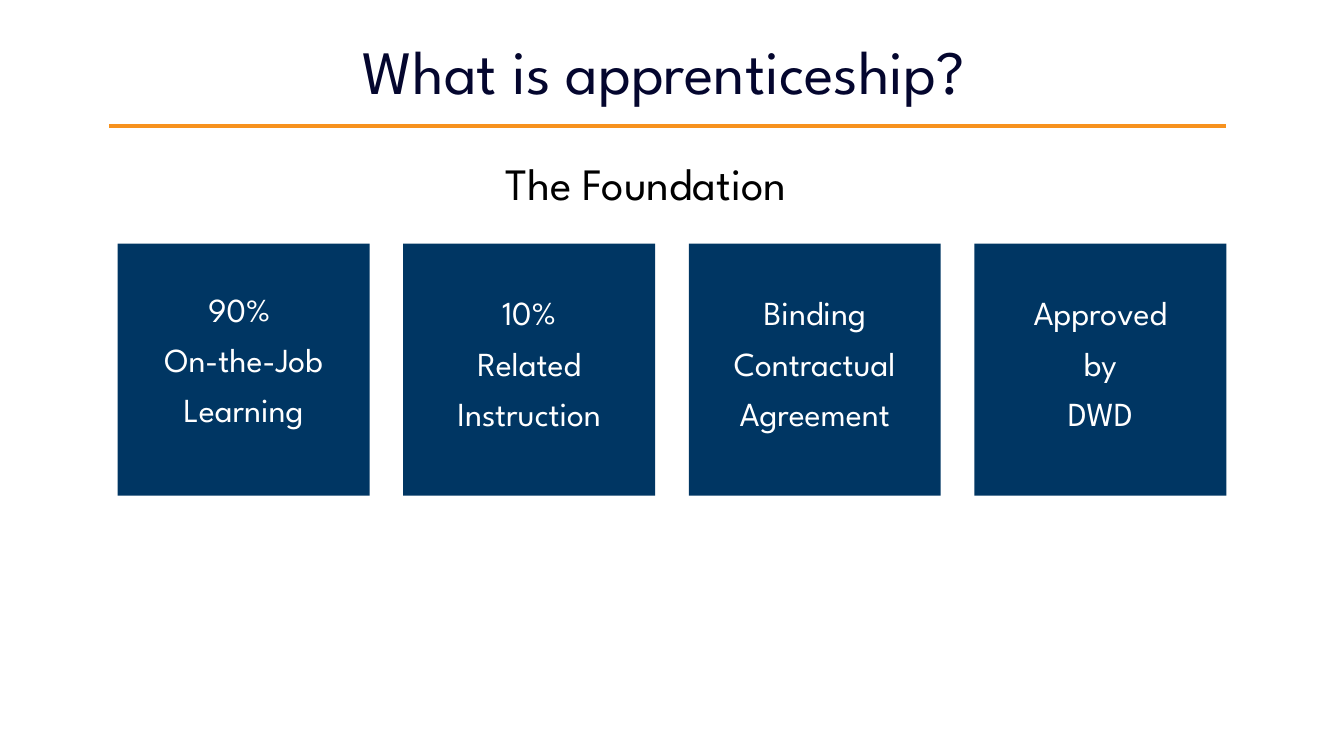
from lxml import etree
from pptx import Presentation
from pptx.dml.color import RGBColor
from pptx.enum.shapes import MSO_CONNECTOR, MSO_SHAPE
from pptx.enum.text import MSO_ANCHOR, PP_ALIGN
from pptx.oxml.ns import qn
from pptx.util import Pt

STRAIGHT = MSO_CONNECTOR.STRAIGHT
RECTANGLE = MSO_SHAPE.RECTANGLE
TOP, MIDDLE = MSO_ANCHOR.TOP, MSO_ANCHOR.MIDDLE
LEFT, CENTER = PP_ALIGN.LEFT, PP_ALIGN.CENTER

INK = RGBColor(0x04, 0x06, 0x2E)
NAVY = RGBColor(0x00, 0x36, 0x63)
ORANGE = RGBColor(0xF7, 0x92, 0x1E)
WHITE = RGBColor(0xFF, 0xFF, 0xFF)
BLACK = RGBColor(0x00, 0x00, 0x00)
FONT = "League Spartan"

# Top inset in points, then the lines of each card
FOUNDATIONS = [
    (35.5, ["90% ", "On-the-Job", "Learning"]),
    (38, ["10%", "Related", "Instruction"]),
    (38, ["Binding", "Contractual", "Agreement"]),
    (38, ["Approved", "by", "DWD"]),
]


def write_lines(frame, lines, size, color, align=CENTER, spacing=0.9, gap=0):
    """Fill a text frame with one paragraph per line, with a gap between them."""
    frame.word_wrap = True
    for index, line in enumerate(lines):
        paragraph = frame.paragraphs[0] if index == 0 else frame.add_paragraph()
        paragraph.alignment = align
        paragraph.line_spacing = spacing
        if index:
            paragraph.space_before = Pt(gap)
        run = paragraph.add_run()
        run.text = line
        for name, value in {"name": FONT, "size": Pt(size), "bold": False}.items():
            setattr(run.font, name, value)
        run.font.color.rgb = color


def add_heading(slide, left, top, width, height):
    """Place the slide title with the orange rule below it."""
    title = slide.shapes.add_textbox(Pt(left), Pt(top), Pt(width), Pt(height))
    title.text_frame.vertical_anchor = MIDDLE
    write_lines(title.text_frame, ["What is apprenticeship? "], 44, INK)

    rule_y = Pt(top + height + 12)
    rule = slide.shapes.add_connector(
        STRAIGHT, Pt(left + 12), rule_y, Pt(left + width - 18), rule_y)
    rule.line.color.rgb = ORANGE
    rule.line.width = Pt(3)
    etree.SubElement(rule._element.spPr, qn("a:effectLst"))


def add_subtitle(slide, left, top, width, height):
    subtitle = slide.shapes.add_textbox(Pt(left), Pt(top), Pt(width), Pt(height))
    write_lines(subtitle.text_frame, ["The Foundation"], 32, BLACK, LEFT, 1.0)


def add_foundation_cards(slide, left, top, width, height):
    """Spread square cards evenly over the width."""
    step = (width - height) / (len(FOUNDATIONS) - 1)
    for index, (inset, lines) in enumerate(FOUNDATIONS):
        card = slide.shapes.add_shape(
            RECTANGLE, Pt(left + index * step), Pt(top), Pt(height), Pt(height))
        card.shadow.inherit = False
        card.fill.solid()
        card.fill.fore_color.rgb = NAVY
        card.line.fill.background()
        frame = card.text_frame
        frame.vertical_anchor = TOP
        frame.margin_top = Pt(inset)
        write_lines(frame, lines, 24, WHITE, gap=10)


def main():
    deck = Presentation()
    deck.slide_width, deck.slide_height = Pt(960), Pt(540)
    slide = deck.slides.add_slide(deck.slide_layouts[6])
    add_heading(slide, 66, 29, 828, 49)
    add_foundation_cards(slide, 84, 174, 792, 180)
    add_subtitle(slide, 354, 108, 266, 46)
    deck.save("out.pptx")


if __name__ == "__main__":
    main()
